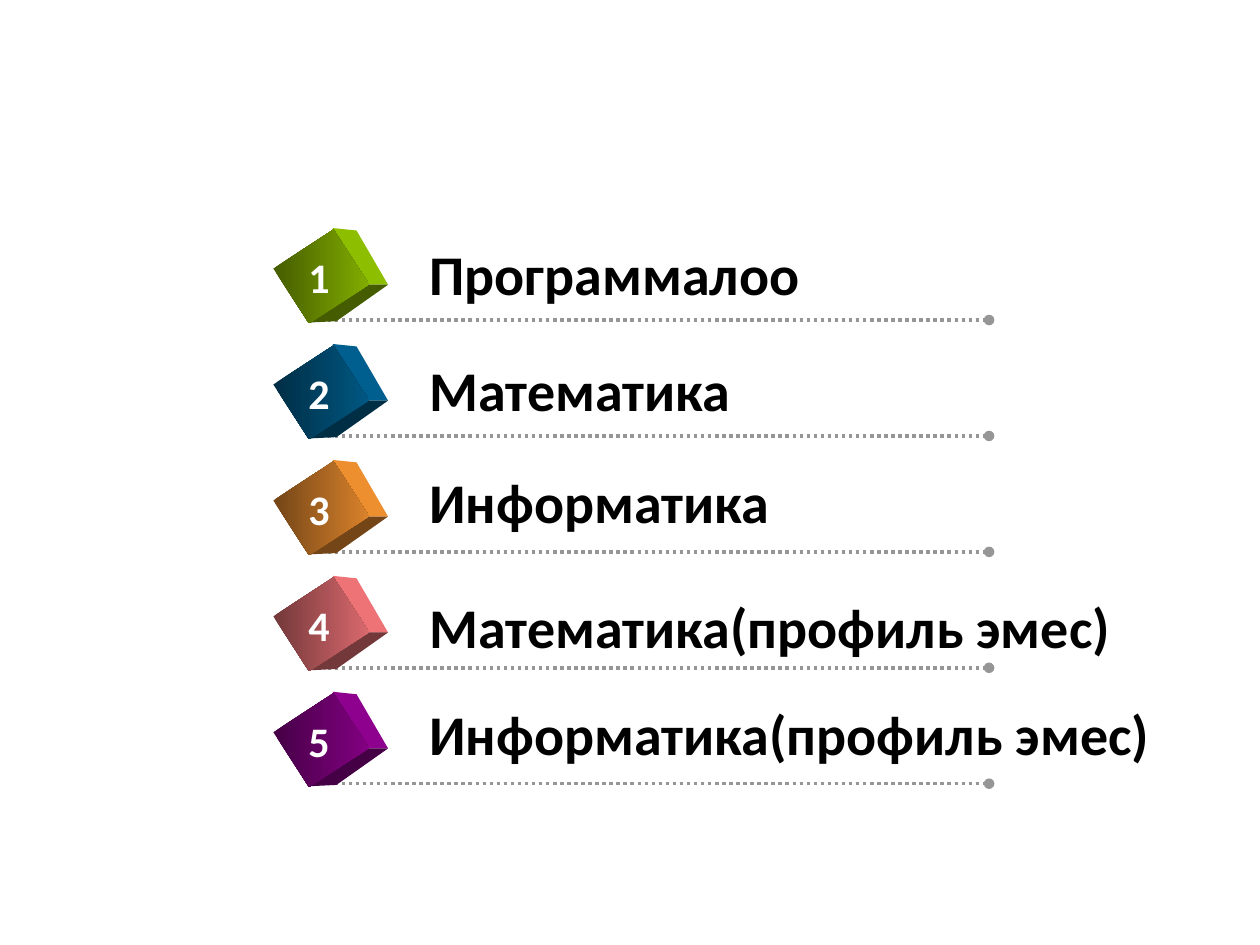
import pptx
import pptx.util
import pptx.dml.color
import pptx.enum.dml
import pptx.enum.shapes
import pptx.enum.text
import pptx.oxml
import pptx.oxml.ns

Inches = pptx.util.Inches
SUBJECTS = [
    ("Программалоо", "99CC00", 3.17, 0.69),
    ("Математика", "006699", 2.61, 0.69),
    ("Информатика", "FF9933", 2.93, 0.72),
    ("Математика(профиль эмес)", "FF7C80", 5.66, 0.65),
    ("Информатика(профиль эмес)", "990099", 5.98, 0.72),
]
FIRST_RULE = 2.54
ROW_PITCH = 0.92


def color(hex_value, strength=1):
    base = pptx.dml.color.RGBColor.from_string(hex_value)
    return pptx.dml.color.RGBColor(*(round(part * strength) for part in base))


def finish(shape, hex_value, strength=1):
    shape.shadow.inherit = False
    shape.fill.solid()
    shape.fill.fore_color.rgb = color(hex_value, strength)
    shape.line.fill.background()


def add_label(shapes, text, left, top, width, height, size, hex_value):
    label = shapes.add_textbox(Inches(left), Inches(top), Inches(width), Inches(height))
    frame = label.text_frame
    frame.word_wrap = False
    frame.auto_size = pptx.enum.text.MSO_AUTO_SIZE.SHAPE_TO_FIT_TEXT
    frame.text = text
    font = frame.paragraphs[0].runs[0].font
    font.name = "Calibri"
    font.size = pptx.util.Pt(size)
    font.bold = True
    font.color.rgb = color(hex_value)


def add_rule(shapes, left, right, y):
    rule = shapes.add_connector(
        pptx.enum.shapes.MSO_CONNECTOR.STRAIGHT,
        Inches(left), Inches(y), Inches(right), Inches(y))
    rule.line.color.rgb = color("969696")
    rule.line.width = pptx.util.Pt(2)
    rule.line.dash_style = pptx.enum.dml.MSO_LINE.ROUND_DOT
    properties = rule._element.spPr
    tail = pptx.oxml.parse_xml(
        f'<a:tailEnd {pptx.oxml.ns.nsdecls("a")} type="oval"/>')
    properties.find(pptx.oxml.ns.qn("a:ln")).append(tail)
    properties.append(pptx.oxml.parse_xml(
        f'<a:effectLst {pptx.oxml.ns.nsdecls("a")}/>'))


def add_face(shapes, left, top, points, hex_value, strength):
    corners = [(Inches(left + x), Inches(top + y)) for x, y in points]
    builder = shapes.build_freeform(*corners[0], scale=1.0)
    builder.add_line_segments(corners[1:], close=True)
    finish(builder.convert_to_shape(), hex_value, strength)


def add_cube(shapes, left, top, hex_value):
    side = [(0.43, 0), (0.62, 0.02), (0.87, 0.45), (0.69, 0.45)]
    base = [(0.25, 0.75), (0.69, 0.45), (0.87, 0.45), (0.46, 0.74)]
    add_face(shapes, left, top, side, hex_value, 0.93)
    add_face(shapes, left, top, base, hex_value, 0.45)
    front = shapes.add_shape(
        pptx.enum.shapes.MSO_SHAPE.RECTANGLE,
        Inches(left + 0.08), Inches(top + 0.1), Inches(0.52), Inches(0.57))
    finish(front, hex_value)
    front.rotation = 57
    front.fill.gradient()
    front.fill.gradient_angle = 57
    for stop, strength in zip(front.fill.gradient_stops, (0.45, 0.85)):
        stop.color.rgb = color(hex_value, strength)


def add_row(slide, left, rule_y, number, subject, hex_value, width, rise):
    shapes = slide.shapes.add_group_shape().shapes
    add_rule(shapes, left + 0.39, left + 5.64, rule_y)
    add_cube(shapes, left, rule_y - 0.73, hex_value)
    add_label(shapes, subject, left + 1.1, rule_y - rise, width, 0.64, 32, "000000")
    add_label(shapes, str(number), left + 0.14, rule_y - 0.59, 0.37, 0.51, 24, "FFFFFF")


def add_panel(slide, left, top, width, height):
    panel = slide.shapes.add_shape(
        pptx.enum.shapes.MSO_SHAPE.RECTANGLE,
        Inches(left), Inches(top), Inches(width), Inches(height))
    finish(panel, "FFFFFF")


def main():
    deck = pptx.Presentation()
    deck.slide_width = Inches(10)
    deck.slide_height = Inches(7.5)
    slide = deck.slides.add_slide(deck.slide_layouts[6])
    add_panel(slide, 0.2, 0.18, 9.63, 7.17)
    for index, subject in enumerate(SUBJECTS):
        add_row(slide, 2.21, FIRST_RULE + index * ROW_PITCH, index + 1, *subject)
    deck.save("out.pptx")


if __name__ == "__main__":
    main()
